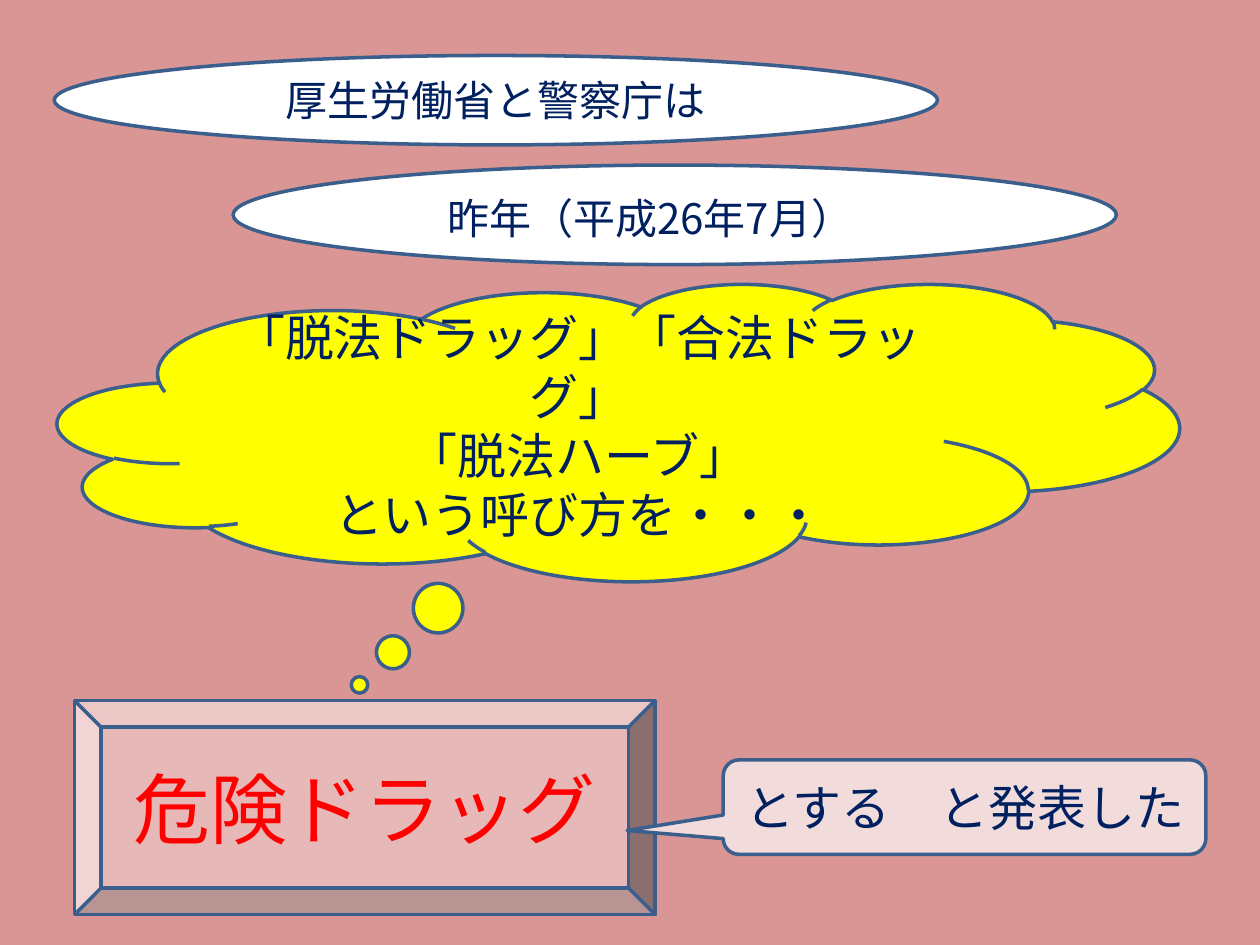
from lxml.etree import SubElement
from pptx import Presentation
from pptx.dml.color import RGBColor
from pptx.enum.shapes import MSO_SHAPE
from pptx.enum.text import MSO_ANCHOR, PP_ALIGN
from pptx.oxml.ns import qn
from pptx.util import Pt

FONT = "Noto Sans CJK JP"
NAVY, RED, OUTLINE = "002060", "FF0000", "3A5F8C"


def color(value):
    return RGBColor.from_string(value)


def add_run(paragraph, text, size, text_color):
    run = paragraph.add_run()
    run.text = text
    for name, value in {"name": FONT, "size": Pt(size)}.items():
        setattr(run.font, name, value)
    run.font.color.rgb = color(text_color)
    SubElement(run.font._element, qn("a:ea"), typeface=FONT)


def add_bubble(slide, kind, box, fill, lines, text_color=NAVY, adjustments=()):
    """Each line is a list of (text, size) runs; box is left, top, width, height."""
    shape = slide.shapes.add_shape(kind, *map(Pt, box))
    shape.shadow.inherit = False
    for index, value in enumerate(adjustments):
        shape.adjustments[index] = value
    shape.fill.solid()
    shape.fill.fore_color.rgb = color(fill)
    shape.line.color.rgb = color(OUTLINE)
    shape.line.width = Pt(2)

    frame = shape.text_frame
    for name, value in {"word_wrap": True, "vertical_anchor": MSO_ANCHOR.MIDDLE}.items():
        setattr(frame, name, value)
    for index, runs in enumerate(lines):
        paragraph = frame.add_paragraph() if index else frame.paragraphs[0]
        paragraph.alignment = PP_ALIGN.CENTER
        for text, size in runs:
            add_run(paragraph, text, size, text_color)


def add_headlines(slide, left, top):
    """Two staggered ellipses: who announced it, and when."""
    width = 504.7
    add_bubble(slide, MSO_SHAPE.OVAL, (left, top, width, 51.1), "FFFFFF",
               [[("厚生労働省と警察庁は", 24)]])
    add_bubble(slide, MSO_SHAPE.OVAL, (left + 102.2, top + 62.6, width, 56.9), "FFFFFF",
               [[("昨年（平成26年7月）", 24), ("\u3000".replace("\u3000", "　"), 28)]])


def add_old_names(slide, box):
    names = ("「脱法ドラッグ」「合法ドラッグ」", "「脱法ハーブ」", "という呼び方を・・・")
    add_bubble(slide, MSO_SHAPE.CLOUD_CALLOUT, box, "FFFF00",
               [[(name, 28)] for name in names], adjustments=(-0.231, 0.85))


def add_new_name(slide, left, top):
    """The new name on a bevelled plate, with a callout to its right."""
    add_bubble(slide, MSO_SHAPE.BEVEL, (left, top, 331.9, 122.4), "E6B9B8",
               [[("危険ドラッグ", 44)]], RED)
    add_bubble(slide, MSO_SHAPE.ROUNDED_RECTANGULAR_CALLOUT,
               (left + 370.8, top + 33.9, 275.8, 54), "F2DCDB",
               [[("とする　と発表した", 28)]], adjustments=(-0.699, 0.248, 0.167))


def main():
    presentation = Presentation()
    presentation.slide_width, presentation.slide_height = Pt(720), Pt(540)
    slide = presentation.slides.add_slide(presentation.slide_layouts[6])
    slide.background.fill.solid()
    slide.background.fill.fore_color.rgb = color("D99694")

    add_new_name(slide, 42.5, 400.3)
    add_old_names(slide, (33.1, 162, 640.8, 169.9))
    add_headlines(slide, 31, 31.7)
    presentation.save("out.pptx")


if __name__ == "__main__":
    main()
